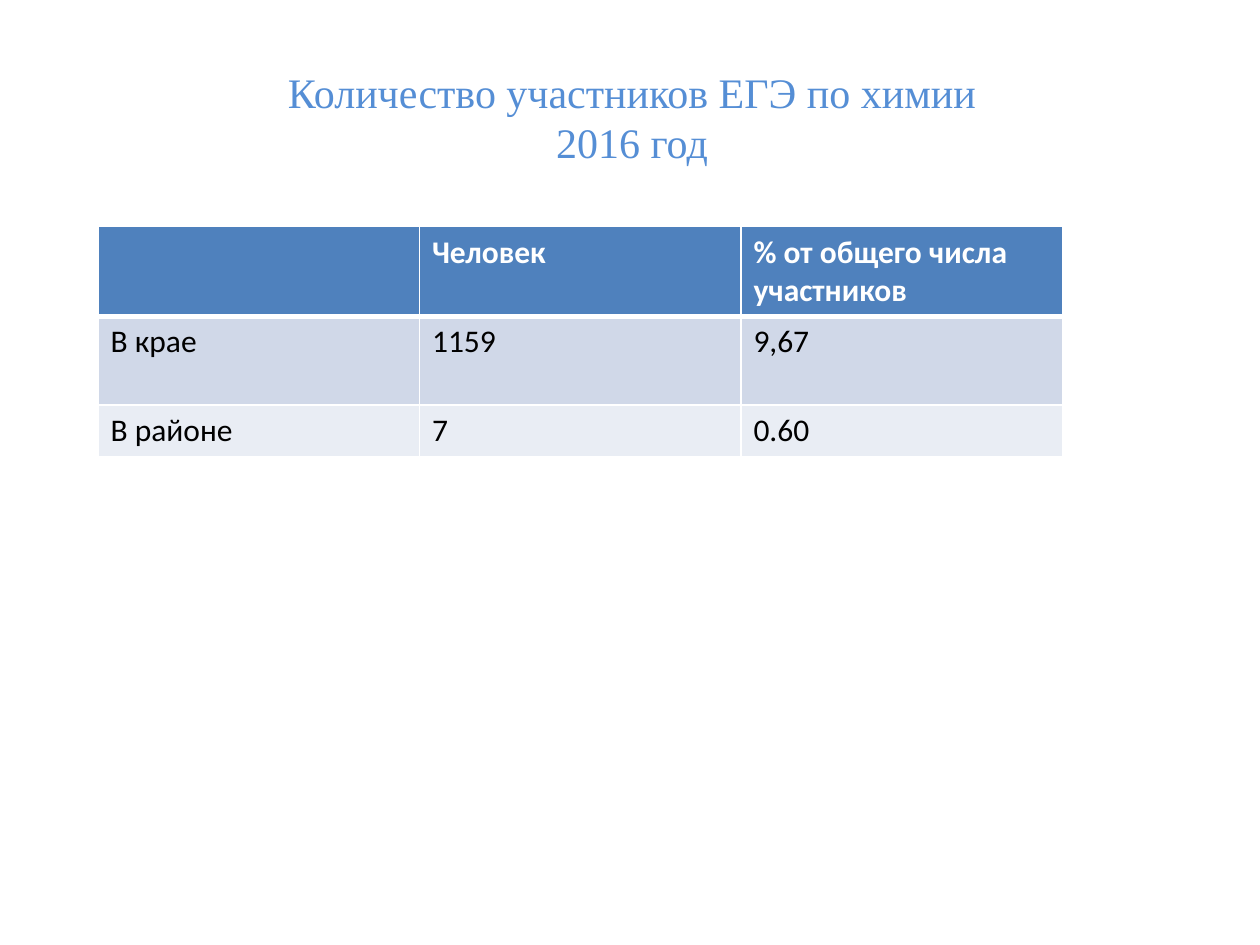
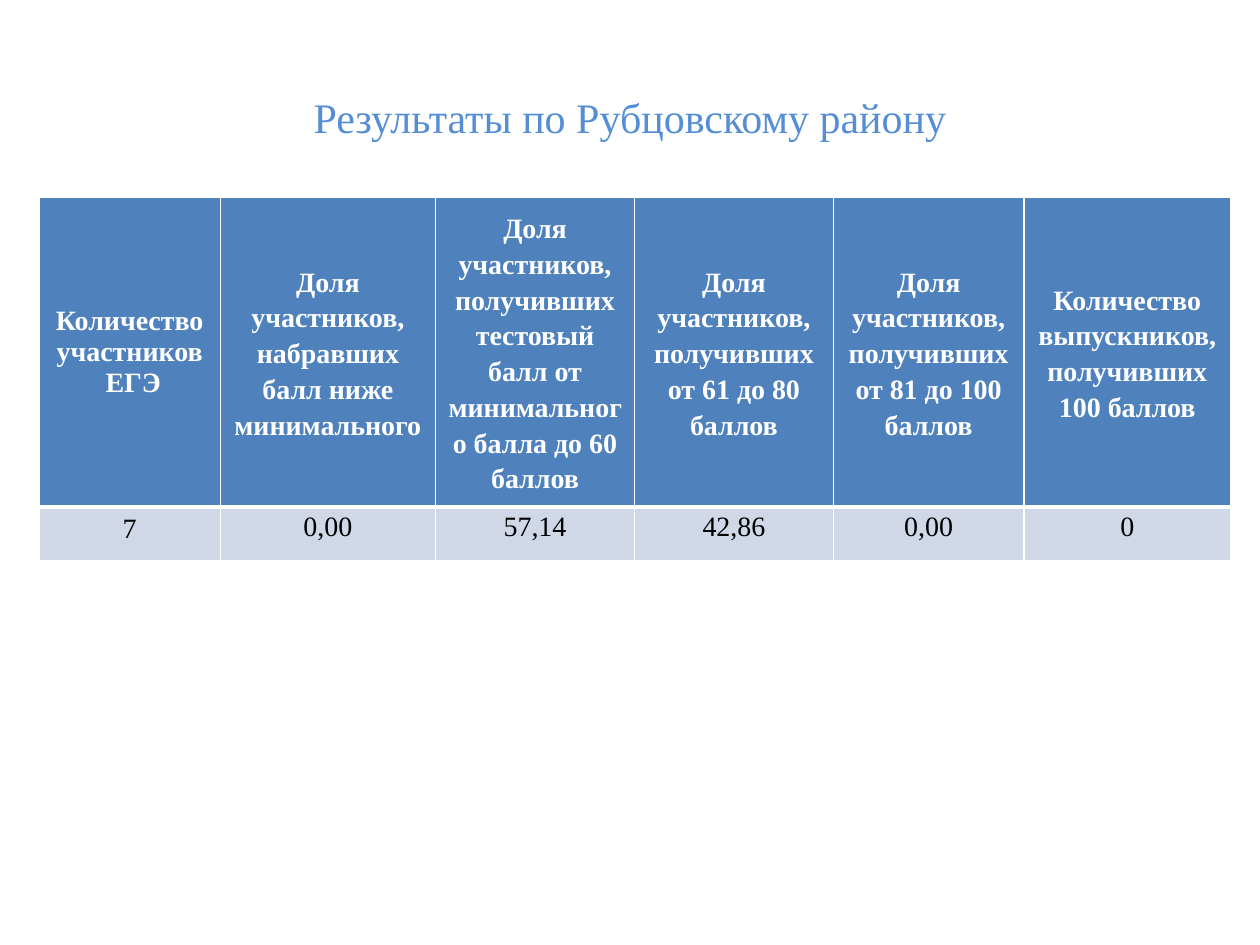
"""Build two slides of chemistry exam results, each a title and a table."""
from lxml.etree import SubElement
from pptx import Presentation
from pptx.dml.color import RGBColor
from pptx.enum.text import MSO_ANCHOR, PP_ALIGN
from pptx.oxml.ns import qn
from pptx.util import Cm, Pt

THEME = {
    "title": {"name": "Times New Roman", "size": Pt(24), "color": "558ED5"},
    "head": {"bold": True, "color": "FFFFFF"},
    "body": {"bold": False, "color": "000000"},
    "fills": ("4F81BD", "D0D8E8", "E9EDF4"),
    "edge": "FFFFFF",
    "thin": Pt(1),
    "thick": Pt(3),
}
PLAIN = {"margin_left": Cm(0.25), "margin_right": Cm(0.25),
         "margin_top": Cm(0.13), "margin_bottom": Cm(0.13)}
TIGHT = {"margin_left": Cm(0.18), "margin_right": Cm(0.18),
         "margin_top": 0, "margin_bottom": 0}
SLIDES = [
    {
        "title": ["Количество участников ЕГЭ по химии", "2016 год"],
        "width": 22.94,
        "at": (1.98, 4.57),
        "cols": [6.48] * 3,
        "rows": [1.8, 1.78, 1.04],
        "font": {"name": "Calibri", "size": Pt(18)},
        "dense": False,
        "cells": [
            ["", "Человек", "% от общего числа участников"],
            ["В крае", "1159", "9,67"],
            ["В районе", "7", "0.60"],
        ],
    },
    {
        "title": ["Результаты по Рубцовскому району"],
        "width": 22.86,
        "at": (0.79, 3.97),
        "cols": [3.65, 4.34, 4.01, 4.01, 3.84, 4.17],
        "rows": [6.25, 1.09],
        "font": {"name": "Times New Roman", "size": Pt(16)},
        "dense": True,
        "cells": [
            ["Количество участников\n ЕГЭ",
             "Доля участников, набравших балл ниже минимального",
             "Доля участников, получивших тестовый балл от "
             "минимального балла до 60 баллов",
             "Доля участников, получивших от 61 до 80 баллов",
             "Доля участников, получивших от 81 до 100 баллов",
             "Количество выпускников, получивших 100 баллов"],
            ["7", "0,00", "57,14", "42,86", "0,00", "0"],
        ],
    },
]


def put(item, style):
    for key, val in style.items():
        if key == "color":
            item.color.rgb = RGBColor.from_string(val)
        else:
            setattr(item, key, val)


def add_title(slide, data):
    box = slide.shapes.title
    put(box, {"left": Cm(1.27), "top": Cm(0.76),
              "width": Cm(data["width"]), "height": Cm(3.18)})
    box.text_frame.vertical_anchor = MSO_ANCHOR.MIDDLE
    para = box.text_frame.paragraphs[0]
    para.alignment = PP_ALIGN.CENTER
    for num, line in enumerate(data["title"]):
        if num:
            para.add_line_break()
        run = para.add_run()
        run.text = line
        put(run.font, THEME["title"])


def add_edges(cell, row):
    props = cell._tc.get_or_add_tcPr()
    for side in "LRTB":
        heavy = (row, side) in ((0, "B"), (1, "T"))
        size = THEME["thick" if heavy else "thin"]
        line = SubElement(props, qn(f"a:ln{side}"), w=str(size))
        fill = SubElement(line, qn("a:solidFill"))
        SubElement(fill, qn("a:srgbClr"), val=THEME["edge"])


def fill_cell(cell, text, row, col, data):
    dense = data["dense"]
    head = row == 0
    add_edges(cell, row)
    cell.fill.solid()
    cell.fill.fore_color.rgb = RGBColor.from_string(THEME["fills"][row])
    put(cell, TIGHT if dense and (head or col) else PLAIN)
    cell.vertical_anchor = (
        MSO_ANCHOR.MIDDLE if dense and head else MSO_ANCHOR.TOP)
    cell.text = text
    for para in cell.text_frame.paragraphs:
        para.alignment = PP_ALIGN.CENTER if dense else PP_ALIGN.LEFT
        para.line_spacing = 1.15 if dense and col else 1.0
        for run in para.runs:
            put(run.font, data["font"] | THEME["head" if head else "body"])


def add_grid(slide, data):
    cols, rows = data["cols"], data["rows"]
    sizes = (*data["at"], sum(cols), sum(rows))
    grid = slide.shapes.add_table(
        len(rows), len(cols), *map(Cm, sizes)).table
    for col, wide in zip(grid.columns, cols):
        col.width = Cm(wide)
    for row, high in zip(grid.rows, rows):
        row.height = Cm(high)
    for row, line in enumerate(data["cells"]):
        for col, text in enumerate(line):
            fill_cell(grid.cell(row, col), text, row, col, data)


def main():
    deck = Presentation()
    put(deck, {"slide_width": Cm(25.4), "slide_height": Cm(19.05)})
    for data in SLIDES:
        slide = deck.slides.add_slide(deck.slide_layouts[5])
        add_title(slide, data)
        add_grid(slide, data)
    deck.save("out.pptx")


if __name__ == "__main__":
    main()
